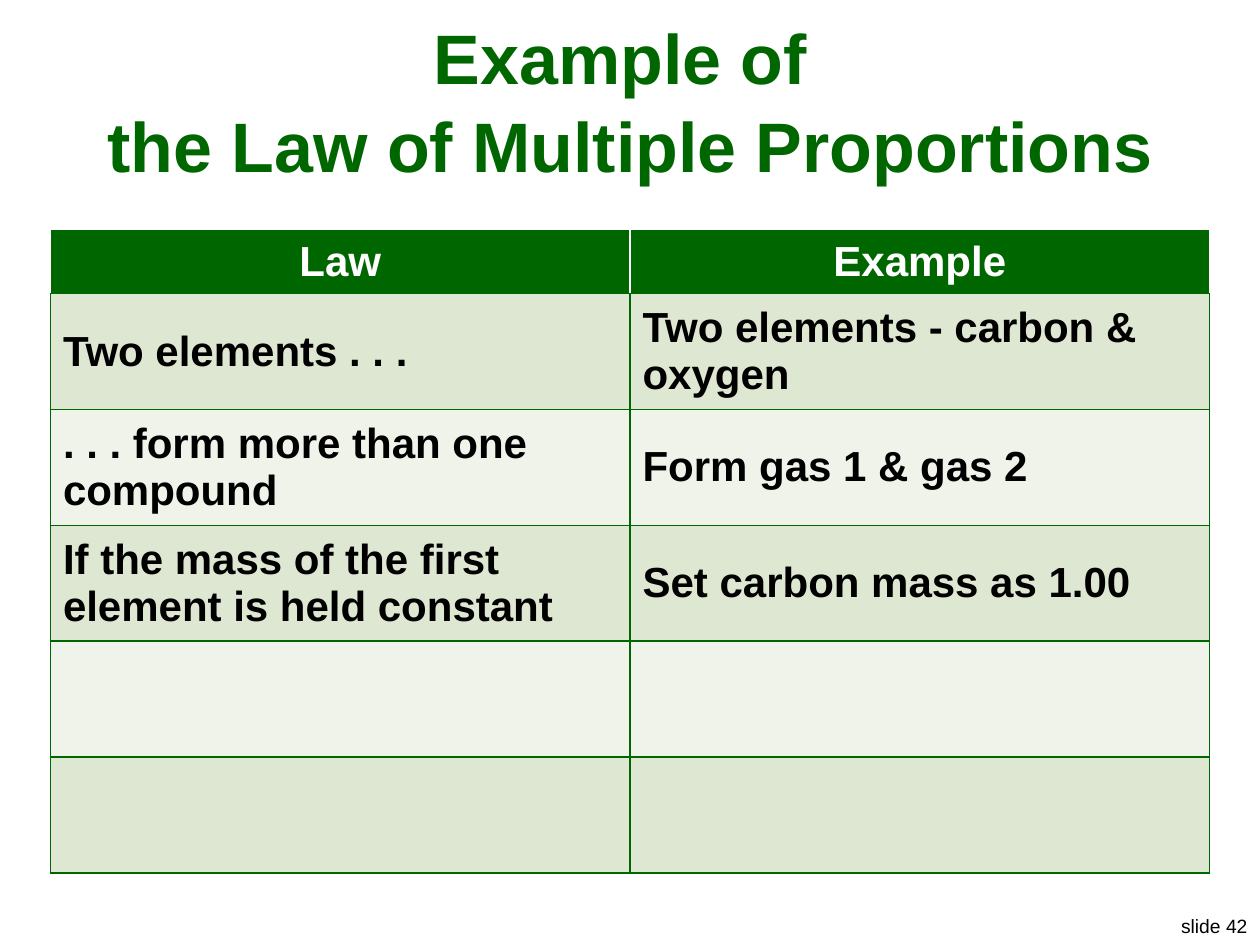
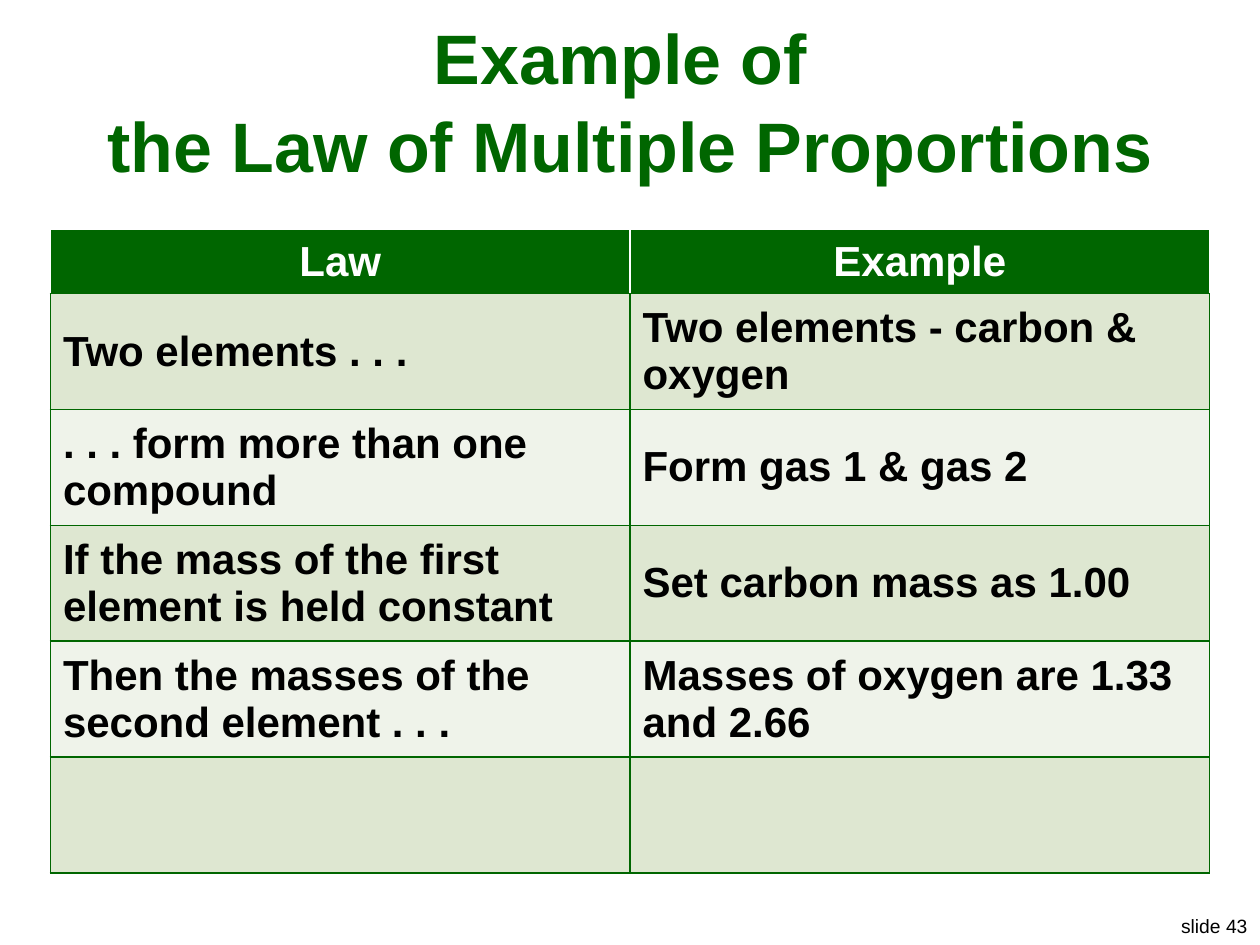
from dataclasses import dataclass

from lxml.etree import SubElement
from pptx import Presentation
from pptx.dml.color import RGBColor as Color
from pptx.enum.text import MSO_ANCHOR as Anchor, MSO_AUTO_SIZE as AutoSize, PP_ALIGN as Align
from pptx.oxml.ns import qn
from pptx.util import Inches, Pt


@dataclass(frozen=True)
class Theme:
    font: str = "Arial"
    green: str = "006600"
    white: str = "FFFFFF"
    black: str = "000000"
    bands: tuple = ("DEE7D1", "EFF3EA")
    title_size: int = 40
    table_size: int = 24
    footer_size: int = 11
    border: int = 1


THEME = Theme()
FIRST_NUMBER = 42
TITLE = "Example of \vthe Law of Multiple Proportions"
HEADINGS = ("Law", "Example")
STEPS = [
    ("Two elements . . .", "Two elements - carbon & oxygen"),
    (". . . form more than one compound", "Form gas 1 & gas 2"),
    ("If the mass of the first element is held constant", "Set carbon mass as 1.00"),
    ("Then the masses of the second element . . .", "Masses of oxygen are 1.33 and 2.66"),
]
BODY_ROWS = 5
HEADER_HEIGHT, ROW_HEIGHT = 0.51, 0.92


def style(para, size, color, bold=False, align=Align.LEFT):
    para.alignment = align
    para.font.name = THEME.font
    para.font.size = Pt(size)
    para.font.bold = bold
    para.font.color.rgb = Color.from_string(color)


def set_title(page):
    title = page.shapes.title
    title.left, title.top = Inches(0.2), Inches(0.3)
    title.width, title.height = Inches(9.6), Inches(0.97)
    frame = title.text_frame
    frame.text = TITLE
    frame.auto_size = AutoSize.NONE
    frame.vertical_anchor = Anchor.MIDDLE
    para = frame.paragraphs[0]
    para.line_spacing = 1.04
    style(para, THEME.title_size, THEME.green, True, Align.CENTER)


def add_footer(page, number):
    box = page.shapes.add_textbox(Inches(9.25), Inches(7.21), Inches(0.75), Inches(0.29))
    box.text_frame.word_wrap = False
    para = box.text_frame.paragraphs[0]
    style(para, THEME.footer_size, THEME.black, align=Align.RIGHT)
    para.add_run().text = "slide "
    # The number is a live field
    field = SubElement(para._p, qn("a:fld"), type="slidenum",
                       id="{5B0A4C1E-3D52-4B7A-9C11-6F2D8E7A9042}")
    SubElement(field, qn("a:rPr"), lang="en-US")
    SubElement(field, qn("a:t")).text = str(number)


def set_borders(cell, outer, bottom):
    properties = cell._tc.get_or_add_tcPr()
    for side, color in (("L", outer), ("R", outer), ("T", outer), ("B", bottom)):
        line = SubElement(properties, qn(f"a:ln{side}"), w=str(Pt(THEME.border)))
        fill = SubElement(line, qn("a:solidFill"))
        SubElement(fill, qn("a:srgbClr"), val=color)


def fill_cell(cell, text, fill, color, outer, align):
    cell.text = text
    cell.vertical_anchor = Anchor.MIDDLE
    style(cell.text_frame.paragraphs[0], THEME.table_size, color, True, align)
    set_borders(cell, outer, THEME.green)
    cell.fill.solid()
    cell.fill.fore_color.rgb = Color.from_string(fill)


def add_law_table(page, steps):
    height = HEADER_HEIGHT + BODY_ROWS * ROW_HEIGHT
    table = page.shapes.add_table(BODY_ROWS + 1, len(HEADINGS), Inches(0.4), Inches(1.82),
                                  Inches(9.2), Inches(height)).table
    for index, row in enumerate(table.rows):
        row.height = Inches(ROW_HEIGHT if index else HEADER_HEIGHT)

    # Header row
    for cell, heading in zip(table.rows[0].cells, HEADINGS):
        fill_cell(cell, heading, THEME.green, THEME.white, THEME.white, Align.CENTER)

    # Banded rows; steps not yet revealed stay empty
    for index in range(BODY_ROWS):
        texts = steps[index] if index < len(steps) else ("", "")
        band = THEME.bands[index % 2]
        for cell, text in zip(table.rows[index + 1].cells, texts):
            fill_cell(cell, text, band, THEME.black, THEME.green, Align.LEFT)


def main():
    deck = Presentation()
    deck.slide_width, deck.slide_height = Inches(10), Inches(7.5)
    deck.element.set("firstSlideNum", str(FIRST_NUMBER))
    title_only = deck.slide_layouts[5]

    # Each slide reveals one more step
    for offset, shown in enumerate((3, 4)):
        page = deck.slides.add_slide(title_only)
        add_footer(page, FIRST_NUMBER + offset)
        set_title(page)
        add_law_table(page, STEPS[:shown])

    deck.save("out.pptx")


if __name__ == "__main__":
    main()
